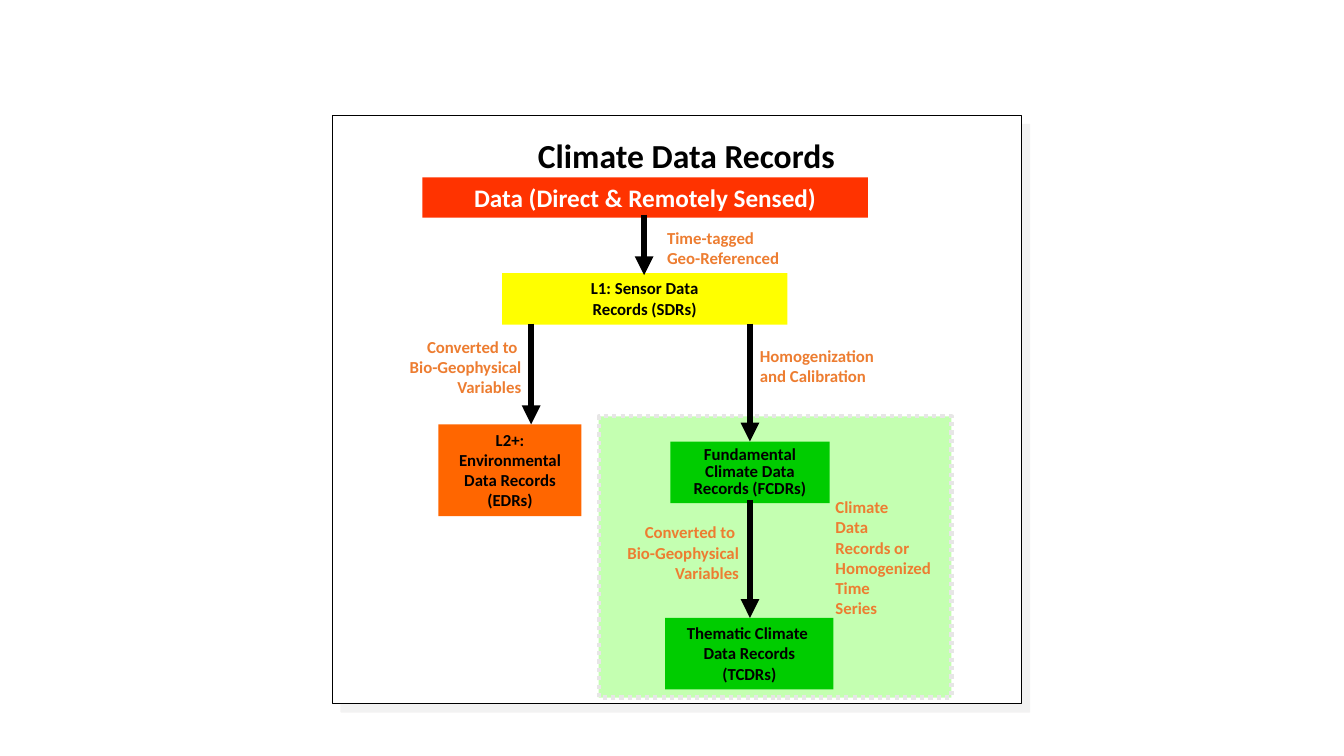
from dataclasses import dataclass

from lxml.etree import SubElement
from pptx import Presentation
from pptx.dml.color import RGBColor
from pptx.enum.dml import MSO_LINE
from pptx.enum.shapes import MSO_CONNECTOR, MSO_SHAPE
from pptx.enum.text import MSO_ANCHOR, MSO_AUTO_SIZE, PP_ALIGN
from pptx.oxml.ns import qn
from pptx.shapes.autoshape import Shape
from pptx.slide import Slide
from pptx.util import Pt

FONT = "Calibri"
BLACK, WHITE, GREY = "000000", "FFFFFF", "E7E6E6"
GREEN, ORANGE = "00CC00", "ED7D31"
CONVERTED = "Converted to \nBio-Geophysical Variables"


@dataclass
class Box:
    left: float
    top: float
    width: float
    height: float
    fill: str
    text: str
    size: float = 12
    color: str = BLACK
    spacing: float = 1.0


@dataclass
class Label:
    left: float
    top: float
    width: float
    height: float
    text: str
    align: PP_ALIGN = PP_ALIGN.LEFT


@dataclass
class Arrow:
    x: float
    top: float
    bottom: float


BOXES = [
    Box(358.6, 195.1, 203.8, 36.7, "FFFF00", "L1: Sensor Data\nRecords (SDRs)"),
    Box(301.7, 126.7, 318.2, 28.8, "FF3300", "Data (Direct & Remotely Sensed)", 18, WHITE),
    Box(478.8, 315.4, 113.8, 43.9, GREEN, "Fundamental Climate Data Records (FCDRs)", spacing=0.85),
    Box(475.2, 441.4, 120.2, 51.1, GREEN, "Thematic Climate \nData Records\n(TCDRs)"),
    Box(313.2, 303.1, 102.2, 65.5, "FF6600", "L2+: Environmental\nData Records\n(EDRs)"),
]
LABELS = [
    Label(589.7, 351.4, 108, 94.3, "Climate \nData \nRecords or Homogenized Time \nSeries"),
    Label(535.7, 243.4, 162, 36, "Homogenization \nand Calibration"),
    Label(469.4, 159.1, 162, 36, "Time-tagged \nGeo-Referenced"),
    Label(265.7, 236.9, 113.8, 51.1, CONVERTED, PP_ALIGN.RIGHT),
    Label(421.2, 369.4, 113.8, 51.1, CONVERTED, PP_ALIGN.RIGHT),
]
ARROWS = [
    Arrow(379.4, 231.1, 303.1),
    Arrow(535.7, 231.1, 315.4),
    Arrow(535.7, 357.1, 441.4),
    Arrow(460.1, 153.4, 196.6),
]


def rgb(color: str) -> RGBColor:
    return RGBColor.from_string(color)


def write(sp: Shape, text: str, size: float, color: str, align: PP_ALIGN,
          spacing: float = 1.0) -> None:
    tf = sp.text_frame
    tf.word_wrap = True
    tf.auto_size = MSO_AUTO_SIZE.NONE
    tf.vertical_anchor = MSO_ANCHOR.TOP
    p = tf.paragraphs[0]
    p.alignment = align
    p.line_spacing = spacing
    p.space_before = Pt(0)
    for i, line in enumerate(text.split("\n")):
        if i:
            p.add_line_break()
        r = p.add_run()
        r.text = line
        r.font.name = FONT
        r.font.size = Pt(size)
        r.font.bold = True
        r.font.color.rgb = rgb(color)


def add_rect(s: Slide, left: float, top: float, width: float, height: float,
             fill: str) -> Shape:
    sp = s.shapes.add_shape(MSO_SHAPE.RECTANGLE, Pt(left), Pt(top), Pt(width), Pt(height))
    sp.shadow.inherit = False
    sp.fill.solid()
    sp.fill.fore_color.rgb = rgb(fill)
    sp.line.fill.background()
    return sp


def set_outline(sp: Shape, color: str, width: float) -> None:
    sp.line.color.rgb = rgb(color)
    sp.line.width = Pt(width)


def add_alpha(color_element, percent: int) -> None:
    SubElement(color_element, qn("a:alpha"), val=str(percent * 1000))


def add_panel(s: Slide) -> None:
    sp = add_rect(s, 237.6, 82.8, 491.8, 419.8, WHITE)
    set_outline(sp, BLACK, 0.75)
    effects = sp.element.spPr.find(qn("a:effectLst"))
    shadow = SubElement(effects, qn("a:outerShdw"), blurRad="0", dist=str(Pt(8.5)),
                        dir=str(45 * 60000), algn="ctr", rotWithShape="0")
    add_alpha(SubElement(shadow, qn("a:srgbClr"), val=GREY), 50)


def add_climate_zone(s: Slide) -> None:
    sp = add_rect(s, 427.7, 297.4, 252, 200.9, "66FF33")
    add_alpha(sp.element.spPr.find(qn("a:solidFill"))[0], 38)
    set_outline(sp, GREY, 3)
    sp.line.dash_style = MSO_LINE.ROUND_DOT


def add_box(s: Slide, box: Box) -> None:
    sp = add_rect(s, box.left, box.top, box.width, box.height, box.fill)
    write(sp, box.text, box.size, box.color, PP_ALIGN.CENTER, box.spacing)


def add_label(s: Slide, label: Label) -> None:
    sp = s.shapes.add_textbox(Pt(label.left), Pt(label.top), Pt(label.width), Pt(label.height))
    write(sp, label.text, 12, ORANGE, label.align)


def add_arrow(s: Slide, arrow: Arrow) -> None:
    line = s.shapes.add_connector(MSO_CONNECTOR.STRAIGHT, Pt(arrow.x), Pt(arrow.top),
                                  Pt(arrow.x), Pt(arrow.bottom))
    line.line.color.rgb = rgb(BLACK)
    line.line.width = Pt(4.5)
    SubElement(line.line._get_or_add_ln(), qn("a:tailEnd"), type="triangle")
    SubElement(line.element.spPr, qn("a:effectLst"))


def place_title(s: Slide) -> None:
    title = s.shapes.title
    title.left, title.top = Pt(271.4), Pt(92.9)
    title.width, title.height = Pt(437.8), Pt(36)
    write(title, "Climate Data Records", 24, BLACK, PP_ALIGN.CENTER)
    # Bring the title in front of the white panel
    s.shapes.element.append(title.element)


def main() -> None:
    prs = Presentation()
    prs.slide_width, prs.slide_height = Pt(960), Pt(540)
    s = prs.slides.add_slide(prs.slide_layouts.get_by_name("Title Only"))

    # Backdrop
    add_panel(s)
    add_climate_zone(s)

    # Flow chart
    for box in BOXES:
        add_box(s, box)
    for label in LABELS:
        add_label(s, label)
    for arrow in ARROWS:
        add_arrow(s, arrow)

    place_title(s)
    prs.save("out.pptx")


if __name__ == "__main__":
    main()
